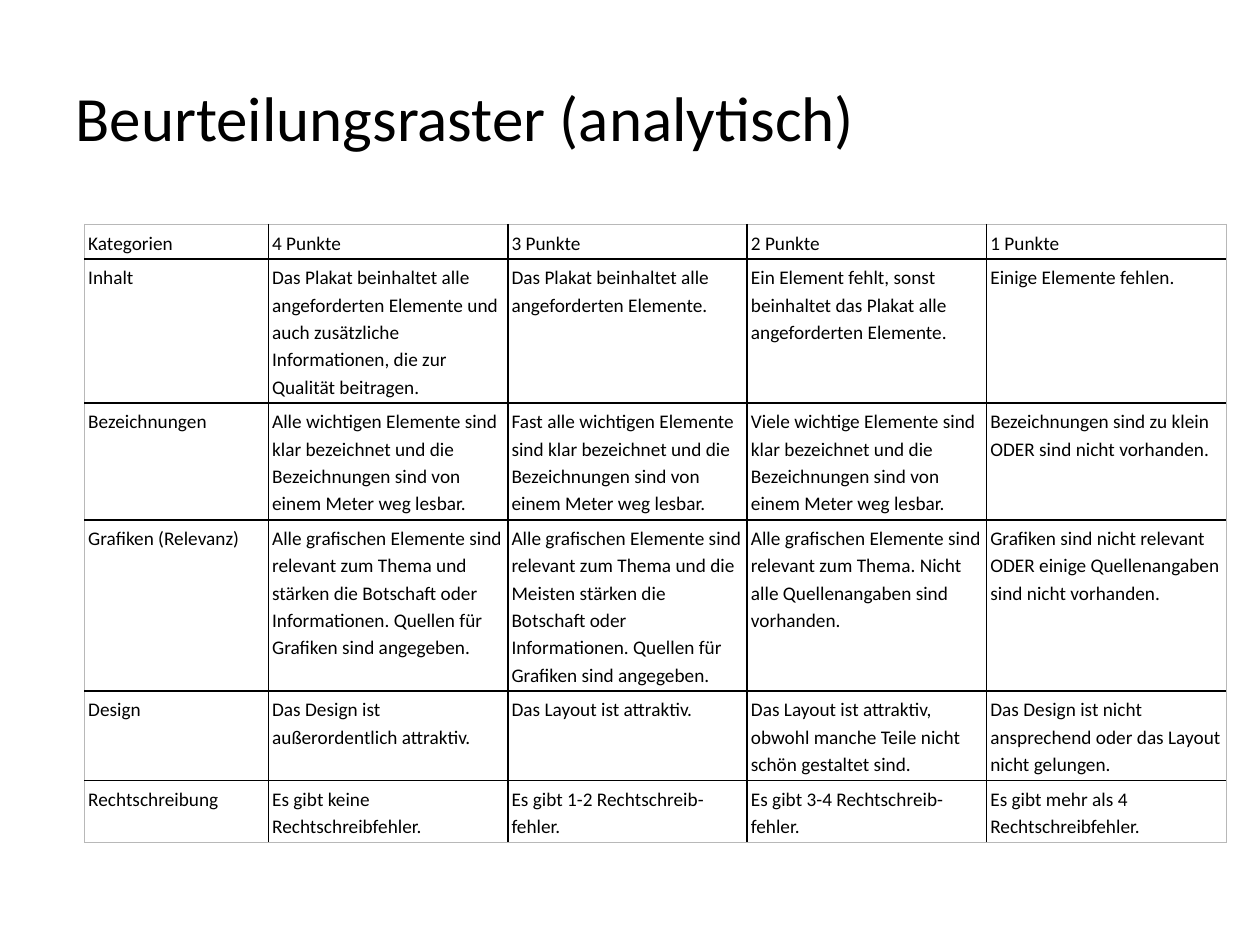
import pptx
import pptx.dml.color
import pptx.enum.text
import pptx.oxml
import pptx.oxml.ns
import pptx.util
from pptx.util import Inches

COLORS = {"text": "000000", "grid": "000000", "frame": "B8B8B8"}

COLUMN_WIDTHS = [1.46] + [1.9] * 4
ROW_HEIGHTS = [0.27, 1.08, 0.88, 1.28, 0.67, 0.47]
RUBRIC = [
    ["Kategorien", "4 Punkte", "3 Punkte", "2 Punkte", "1 Punkte"],
    ["Inhalt",
     "Das Plakat beinhaltet alle angeforderten Elemente und auch zusätzliche "
     "Informationen, die zur Qualität beitragen.",
     "Das Plakat beinhaltet alle angeforderten Elemente.",
     "Ein Element fehlt, sonst beinhaltet das Plakat alle angeforderten Elemente.",
     "Einige Elemente fehlen."],
    ["Bezeichnungen",
     "Alle wichtigen Elemente sind klar bezeichnet und die Bezeichnungen sind "
     "von einem Meter weg lesbar.",
     "Fast alle wichtigen Elemente sind klar bezeichnet und die Bezeichnungen "
     "sind von einem Meter weg lesbar.",
     "Viele wichtige Elemente sind klar bezeichnet und die Bezeichnungen sind "
     "von einem Meter weg lesbar.",
     "Bezeichnungen sind zu klein ODER sind nicht vorhanden."],
    ["Grafiken (Relevanz)",
     "Alle grafischen Elemente sind relevant zum Thema und stärken die Botschaft "
     "oder Informationen. Quellen für Grafiken sind angegeben.",
     "Alle grafischen Elemente sind relevant zum Thema und die Meisten stärken "
     "die Botschaft oder Informationen. Quellen für Grafiken sind angegeben.",
     "Alle grafischen Elemente sind relevant zum Thema. Nicht alle "
     "Quellenangaben sind vorhanden.",
     "Grafiken sind nicht relevant ODER einige Quellenangaben sind nicht vorhanden."],
    ["Design",
     "Das Design ist außerordentlich attraktiv.",
     "Das Layout ist attraktiv.",
     "Das Layout ist attraktiv, obwohl manche Teile nicht schön gestaltet sind.",
     "Das Design ist nicht ansprechend oder das Layout nicht gelungen."],
    ["Rechtschreibung",
     "Es gibt keine Rechtschreibfehler.",
     "Es gibt 1-2 Rechtschreib-fehler.",
     "Es gibt 3-4 Rechtschreib-fehler.",
     "Es gibt mehr als 4 Rechtschreibfehler."],
]


def write_text(frame, text, size, font="Calibri", color="text", spacing=None):
    """Put one left-aligned paragraph into a text frame."""
    para = frame.paragraphs[0]
    para.alignment = pptx.enum.text.PP_ALIGN.LEFT
    if spacing:
        para.line_spacing = spacing
    span = para.add_run()
    span.text = text
    span.font.name = font
    span.font.size = pptx.util.Pt(size)
    span.font.color.rgb = pptx.dml.color.RGBColor.from_string(COLORS[color])


def add_border(cell, side, color, width):
    """Draw one side (L, R, T or B) of a table cell."""
    cell._tc.get_or_add_tcPr().append(pptx.oxml.parse_xml(
        f'<a:ln{side} {pptx.oxml.ns.nsdecls("a")} w="{pptx.util.Pt(width)}">'
        f'<a:solidFill><a:srgbClr val="{COLORS[color]}"/></a:solidFill>'
        f'</a:ln{side}>'))


class SlideBuilder:
    title_size = 36
    cell_size = 11
    cell_spacing = 1.15
    cell_margin = 0.03

    def __init__(self, deck):
        self.page = deck.slides.add_slide(deck.slide_layouts[5])

    def title(self, text, left, top, width, height):
        box = self.page.shapes.title
        box.left, box.top = Inches(left), Inches(top)
        box.width, box.height = Inches(width), Inches(height)
        box.text_frame.vertical_anchor = pptx.enum.text.MSO_ANCHOR.MIDDLE
        write_text(box.text_frame, text, self.title_size)

    def table(self, rows, left, top, widths, heights):
        table = self.page.shapes.add_table(
            len(rows), len(widths), Inches(left), Inches(top),
            Inches(sum(widths)), Inches(sum(heights))).table
        table.first_row = table.horz_banding = False
        for column, width in zip(table.columns, widths):
            column.width = Inches(width)
        for row, height in zip(table.rows, heights):
            row.height = Inches(height)
        last_row, last_column = len(rows) - 1, len(widths) - 1
        for r, texts in enumerate(rows):
            for c, text in enumerate(texts):
                outer = {"L": c == 0, "R": c == last_column,
                         "T": r == 0, "B": r == last_row}
                self.cell(table.cell(r, c), text, outer)

    def cell(self, cell, text, outer):
        cell.margin_left = cell.margin_right = Inches(self.cell_margin)
        cell.margin_top = cell.margin_bottom = Inches(self.cell_margin)
        # Grey outer frame, black inner grid
        for side, is_outer in outer.items():
            add_border(cell, side, *(("frame", 0.5) if is_outer else ("grid", 1)))
        cell.fill.background()
        write_text(cell.text_frame, text, self.cell_size,
                   spacing=self.cell_spacing)


def main():
    deck = pptx.Presentation()
    deck.slide_width, deck.slide_height = Inches(10), Inches(7.5)
    builder = SlideBuilder(deck)

    # Heading
    builder.title("Beurteilungsraster (analytisch)", 0.5, 0.3, 7.18, 1.25)

    # Assessment grid
    builder.table(RUBRIC, 0.67, 1.78, COLUMN_WIDTHS, ROW_HEIGHTS)

    deck.save("out.pptx")


if __name__ == "__main__":
    main()
